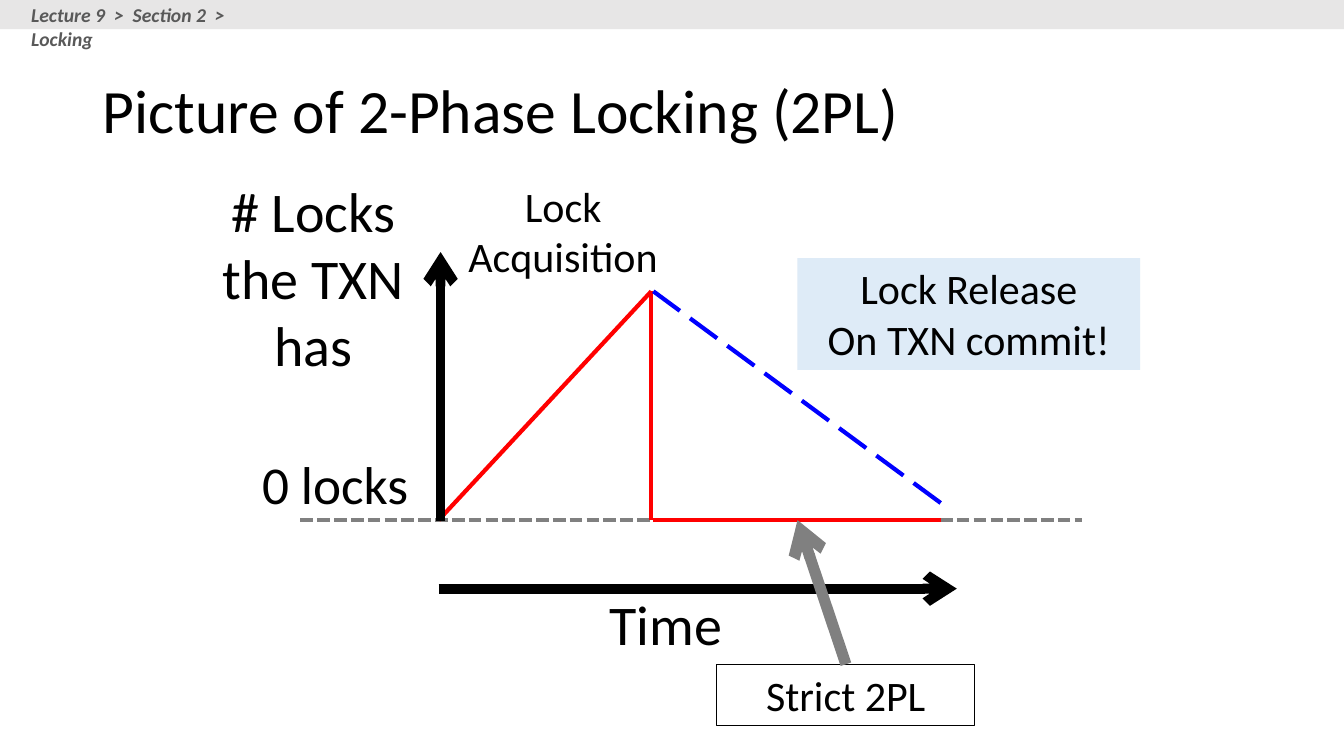
from dataclasses import dataclass

from lxml import etree
from pptx import Presentation
from pptx.dml.color import RGBColor
from pptx.enum.dml import MSO_LINE
from pptx.enum.shapes import MSO_CONNECTOR, MSO_SHAPE
from pptx.enum.text import MSO_ANCHOR, MSO_AUTO_SIZE, PP_ALIGN
from pptx.oxml.ns import qn
from pptx.util import Emu, Inches, Pt

STRAIGHT = MSO_CONNECTOR.STRAIGHT
RECTANGLE = MSO_SHAPE.RECTANGLE
SHORT_DASH, LONG_DASH = MSO_LINE.SQUARE_DOT, MSO_LINE.LONG_DASH
LEFT, CENTER = PP_ALIGN.LEFT, PP_ALIGN.CENTER
TOP_SIDE = 0

FONT = "Calibri"
BLACK, GRAY, RED, BLUE = "000000", "808080", "FF0000", "0000FF"
SLIDE_WIDTH, SLIDE_HEIGHT = 13.33, 7.5
CELL = Inches(0.1)  # one column or row of the layout grid

# Grid positions shared by the parts of the diagram
BASELINE = 51.6
TIME_ROW = 58.4
START, PEAK, RELEASE, END = 43.5, 64.6, 64.8, 93.3
PEAK_ROW = 28.9


@dataclass
class Box:
    """A text block placed by grid columns and rows."""
    lines: tuple[str, ...]
    left: float
    top: float
    width: float
    height: float
    size: float
    fill: str | None = None
    outline: str | None = None
    color: str = BLACK
    align: PP_ALIGN = CENTER
    emphasis: bool = False


@dataclass
class Stroke:
    """A straight line between two (column, row) points."""
    begin: tuple[float, float]
    end: tuple[float, float]
    color: str
    width: float = 3
    dash: MSO_LINE | None = None
    arrow: bool = False


AXES_AND_CURVE = [
    Stroke((29.8, BASELINE), (107.3, BASELINE), GRAY, dash=SHORT_DASH),
    Stroke((START, BASELINE), (PEAK, PEAK_ROW), RED),
    Stroke((START, TIME_ROW), (94.9, TIME_ROW), BLACK, 7, arrow=True),
    Stroke((PEAK, BASELINE), (PEAK, PEAK_ROW), RED),
    Stroke((RELEASE, BASELINE), (END, BASELINE), RED),
    Stroke((END, 49.9), (RELEASE, PEAK_ROW), BLUE, dash=LONG_DASH),
    Stroke((43.7, 51.7), (43.7, 25), BLACK, 7, arrow=True),
]
STRICT_BOX = Box(("Strict 2PL",), 71.1, 65.9, 25.6, 6.1, 30, outline=BLACK)
STRICT_POINTER = Stroke((83.9, 65.9), (79.1, BASELINE), GRAY, 8, arrow=True)
LABELS = [
    Box(("Time",), 53, 58, 26.1, 7.7, 40),
    Box(("0 locks",), 24.8, 44.3, 16.9, 7.4, 38),
    Box(("# Locks the TXN has",), 18, 17, 26.1, 21.2, 40),
    Box(("Lock Acquisition",), 43.2, 17.4, 25.3, 11.1, 30),
    Box(("Lock Release", "On TXN commit!"), 79.1, 25.6, 34, 11.1, 30, fill="DEEBF7"),
]
HEADER_BAND = Box((), 0, 0, SLIDE_WIDTH * 10, 2.9, 14, fill="E7E6E6")
HEADER_TEXT = Box(("Lecture 9  >  Section 2  >  Locking",), 2.1, -0.2, 27.8, 3.4, 14,
                  color="595959", align=LEFT, emphasis=True)


def rgb(value: str) -> RGBColor:
    return RGBColor.from_string(value)


def grid(cells: float) -> Emu:
    return Emu(round(cells * CELL))


def add_run(paragraph, text: str, size: float, color: str, emphasis: bool = False) -> None:
    run = paragraph.add_run()
    run.text = text
    run.font.name = FONT
    run.font.size = Pt(size)
    run.font.color.rgb = rgb(color)
    if emphasis:
        run.font.bold = run.font.italic = True


def add_title(slide, text: str) -> None:
    title = slide.shapes.title
    title.left, title.top = grid(9.2), grid(4)
    title.width, title.height = grid(115), grid(14.5)
    title.text_frame.vertical_anchor = MSO_ANCHOR.MIDDLE
    paragraph = title.text_frame.paragraphs[0]
    paragraph.alignment = LEFT
    paragraph.line_spacing = 0.9
    add_run(paragraph, text, 44, BLACK)


def add_box(slide, box: Box):
    """Draw a rectangle when filled or outlined, otherwise a text box."""
    frame = [grid(value) for value in (box.left, box.top, box.width, box.height)]
    if box.fill or box.outline:
        shape = slide.shapes.add_shape(RECTANGLE, *frame)
        shape.shadow.inherit = False
        if box.fill:
            shape.fill.solid()
            shape.fill.fore_color.rgb = rgb(box.fill)
        else:
            shape.fill.background()
        if box.outline:
            shape.line.color.rgb = rgb(box.outline)
            shape.line.width = Pt(0.75)
        else:
            shape.line.fill.background()
    else:
        shape = slide.shapes.add_textbox(*frame)
    text_frame = shape.text_frame
    text_frame.word_wrap = True
    text_frame.vertical_anchor = MSO_ANCHOR.TOP
    if box.lines:
        text_frame.auto_size = MSO_AUTO_SIZE.SHAPE_TO_FIT_TEXT
    for index, line in enumerate(box.lines):
        paragraph = text_frame.add_paragraph() if index else text_frame.paragraphs[0]
        paragraph.alignment = box.align
        add_run(paragraph, line, box.size, box.color, box.emphasis)
    return shape


def add_stroke(slide, stroke: Stroke):
    points = [grid(value) for value in (*stroke.begin, *stroke.end)]
    connector = slide.shapes.add_connector(STRAIGHT, *points)
    connector.line.color.rgb = rgb(stroke.color)
    connector.line.width = Pt(stroke.width)
    if stroke.dash is not None:
        connector.line.dash_style = stroke.dash
    properties = connector._element.spPr
    if stroke.arrow:
        etree.SubElement(properties.find(qn("a:ln")), qn("a:tailEnd"), type="arrow")
    etree.SubElement(properties, qn("a:effectLst"))
    return connector


def main() -> None:
    presentation = Presentation()
    presentation.slide_width = Inches(SLIDE_WIDTH)
    presentation.slide_height = Inches(SLIDE_HEIGHT)
    title_only = presentation.slide_layouts[5]
    slide = presentation.slides.add_slide(title_only)

    add_title(slide, "Picture of 2-Phase Locking (2PL)")
    for stroke in AXES_AND_CURVE:
        add_stroke(slide, stroke)
    strict_box = add_box(slide, STRICT_BOX)
    add_stroke(slide, STRICT_POINTER).begin_connect(strict_box, TOP_SIDE)
    for box in (*LABELS, HEADER_BAND, HEADER_TEXT):
        add_box(slide, box)

    presentation.save("out.pptx")


if __name__ == "__main__":
    main()
